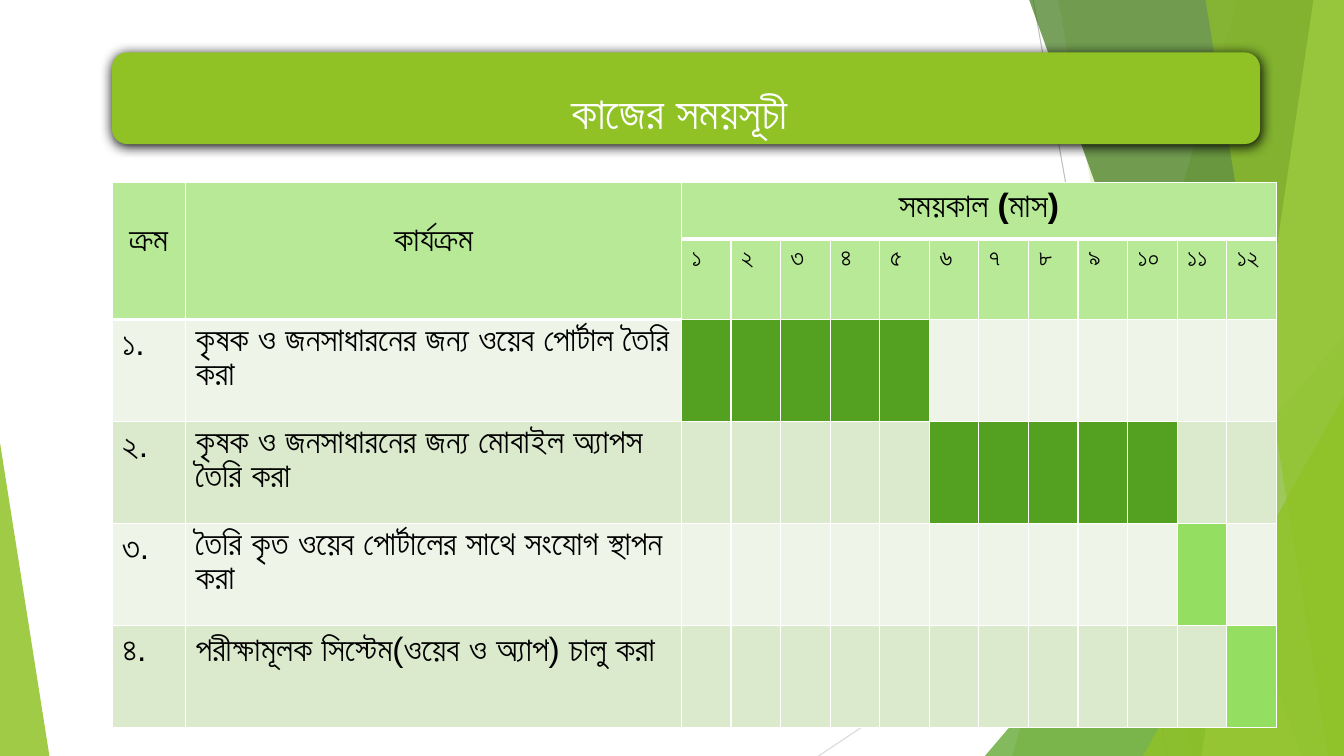
from lxml.etree import SubElement
from pptx import Presentation
from pptx.dml.color import RGBColor
from pptx.enum.shapes import MSO_CONNECTOR as Connector, MSO_SHAPE as Preset
from pptx.enum.text import MSO_ANCHOR as Anchor, PP_ALIGN as Align
from pptx.oxml.ns import qn
from pptx.util import Inches, Pt

WIDTH, HEIGHT = Inches(13.333), Inches(7.5)
FONT = "Arial"
WHITE = RGBColor(0xFF, 0xFF, 0xFF)
BLACK = RGBColor(0x00, 0x00, 0x00)
LIME = RGBColor(0x90, 0xC2, 0x26)
PALE_LIME = RGBColor(0xC0, 0xE4, 0x74)
GREEN = RGBColor(0x54, 0xA0, 0x21)
DARK_GREEN = RGBColor(0x3F, 0x78, 0x19)
LIGHT_GREEN = RGBColor(0x94, 0xDE, 0x61)
HEADER_GREEN = RGBColor(0xB7, 0xE9, 0x96)
BANDS = RGBColor(0xEE, 0xF4, 0xE8), RGBColor(0xDB, 0xE9, 0xCD)
GREY = RGBColor(0xBF, 0xBF, 0xBF)
LIGHT_GREY = RGBColor(0xD9, 0xD9, 0xD9)

MONTHS = "১ ২ ৩ ৪ ৫ ৬ ৭ ৮ ৯ ১০ ১১ ১২".split()
TASKS = [
    ("১.", "কৃষক ও জনসাধারনের জন্য ওয়েব পোর্টাল তৈরি করা", range(1, 6), GREEN, 0.9),
    ("২.", "কৃষক ও জনসাধারনের জন্য মোবাইল অ্যাপস তৈরি করা", range(6, 11), GREEN, 0.9),
    ("৩.", "তৈরি কৃত ওয়েব পোর্টালের সাথে সংযোগ স্থাপন করা", range(11, 12), LIGHT_GREEN, 0.9),
    ("৪.", "পরীক্ষামূলক সিস্টেম(ওয়েব ও অ্যাপ) চালু করা", range(12, 13), LIGHT_GREEN, 1.0),
]
COLUMNS = [5.48, 36.9] + [3.69] * len(MONTHS)
ROWS = [7.47, 10.67] + [13.5] * len(TASKS)


def across(percent):
    return round(WIDTH * percent / 100)


def down(percent):
    return round(HEIGHT * percent / 100)


def paint(shape, color, opacity=100):
    shape.shadow.inherit = False
    shape.line.fill.background()
    shape.fill.solid()
    shape.fill.fore_color.rgb = color
    if opacity < 100:
        tint = shape.fill._xPr.find(".//" + qn("a:srgbClr"))
        SubElement(tint, qn("a:alpha"), val=str(opacity * 1000))


def add_ray(slide, start, end, color):
    ray = slide.shapes.add_connector(
        Connector.STRAIGHT, across(start[0]), down(start[1]), across(end[0]), down(end[1]))
    ray.line.color.rgb = color
    ray.line.width = Pt(0.75)
    SubElement(ray._element.spPr, qn("a:effectLst"))


def add_facet(slide, top, bottom, color, opacity):
    outline = slide.shapes.build_freeform(across(top), 0)
    outline.add_line_segments([(WIDTH, 0), (WIDTH, HEIGHT), (across(bottom), HEIGHT)])
    paint(outline.convert_to_shape(), color, opacity)


def add_corner(slide, left, top, width, apex, color, opacity):
    corner = slide.shapes.add_shape(
        Preset.ISOSCELES_TRIANGLE, across(left), down(top), across(width), HEIGHT - down(top))
    corner.adjustments[0] = apex
    paint(corner, color, opacity)


def add_backdrop(slide):
    add_ray(slide, (76.88, 0), (86.85, 100), GREY)
    add_ray(slide, (100, 53.73), (60.9, 100), LIGHT_GREY)
    add_facet(slide, 92.1, 75.3, LIME, 30)
    add_facet(slide, 78.75, 88.73, LIME, 20)
    add_corner(slide, 73.28, 44.4, 26.72, 1, GREEN, 72)
    add_facet(slide, 76.58, 96.83, DARK_GREEN, 70)
    add_facet(slide, 97.73, 89.4, PALE_LIME, 70)
    add_facet(slide, 89.7, 98.85, LIME, 65)
    add_corner(slide, 85.05, 52.4, 14.95, 1, LIME, 80)
    add_corner(slide, 0, 58.53, 3.68, 0, LIME, 85)


def write(frame, words, size, color=BLACK, bold=False, align=Align.LEFT, spacing=1.0):
    paragraph = frame.paragraphs[0]
    paragraph.alignment = align
    paragraph.line_spacing = spacing
    run = paragraph.add_run()
    run.text = words
    run.font.name = FONT
    run.font.size = Pt(size)
    run.font.bold = bold
    run.font.color.rgb = color
    SubElement(run.font._element, qn("a:cs"), typeface=FONT)


def add_heading(slide, words):
    box = across(8.33), down(6.93), across(85.43), down(12.13)
    banner = slide.shapes.add_shape(Preset.ROUNDED_RECTANGLE, *box)
    paint(banner, LIME)
    effects = banner._element.spPr.find(qn("a:effectLst"))
    shadow = SubElement(effects, qn("a:outerShdw"), blurRad=str(Pt(8.5)),
                        dist=str(Pt(1)), dir="5400000", algn="ctr", rotWithShape="0")
    SubElement(shadow, qn("a:srgbClr"), val=str(BLACK))
    title = slide.shapes.title
    title.left, title.top, title.width, title.height = box
    title.text_frame.word_wrap = True
    title.text_frame.vertical_anchor = Anchor.MIDDLE
    write(title.text_frame, words, 32, WHITE, True, Align.CENTER, 1.5)
    slide.shapes._spTree.append(title._element)


def rule_below(row, column):
    return 3 if row == 0 or (row == 1 and column < 2) else 1


def style_cell(cell, color, above, below):
    properties = cell._tc.get_or_add_tcPr()
    for side, points in (("L", 1), ("R", 1), ("T", above), ("B", below)):
        border = SubElement(properties, qn("a:ln" + side), w=str(Pt(points)))
        SubElement(SubElement(border, qn("a:solidFill")), qn("a:srgbClr"), val=str(WHITE))
    cell.fill.solid()
    cell.fill.fore_color.rgb = color


def cell_color(row, column):
    if row < 2:
        return HEADER_GREEN
    months, bar = TASKS[row - 2][2:4]
    return bar if column - 1 in months else BANDS[row % 2]


def add_schedule(slide):
    schedule = slide.shapes.add_table(
        len(ROWS), len(COLUMNS), across(8.33), down(24.13),
        across(sum(COLUMNS)), down(sum(ROWS))).table
    schedule.first_row = schedule.horz_banding = False
    for column, share in enumerate(COLUMNS):
        schedule.columns[column].width = across(share)
    for row, share in enumerate(ROWS):
        schedule.rows[row].height = down(share)
        for column in range(len(COLUMNS)):
            style_cell(schedule.cell(row, column), cell_color(row, column),
                       rule_below(row - 1, column), rule_below(row, column))

    for column, words in enumerate(("ক্রম", "কার্যক্রম")):
        heading = schedule.cell(0, column)
        heading.merge(schedule.cell(1, column))
        heading.margin_top = down(5.05)
        write(heading.text_frame, words, 24, bold=True, align=Align.CENTER)
    period = schedule.cell(0, 2)
    period.merge(schedule.cell(0, len(COLUMNS) - 1))
    write(period.text_frame, "সময়কাল (মাস)", 24, bold=True, align=Align.CENTER)
    for column, month in enumerate(MONTHS, 2):
        write(schedule.cell(1, column).text_frame, month, 18)
    for row, (number, activity, _, _, spacing) in enumerate(TASKS, 2):
        write(schedule.cell(row, 0).text_frame, number, 24)
        write(schedule.cell(row, 1).text_frame, activity, 24, spacing=spacing)


def main():
    deck = Presentation()
    deck.slide_width, deck.slide_height = WIDTH, HEIGHT
    slide = deck.slides.add_slide(deck.slide_layouts[5])
    add_backdrop(slide)
    add_heading(slide, "কাজের সময়সূচী ")
    add_schedule(slide)
    deck.save("out.pptx")


if __name__ == "__main__":
    main()
